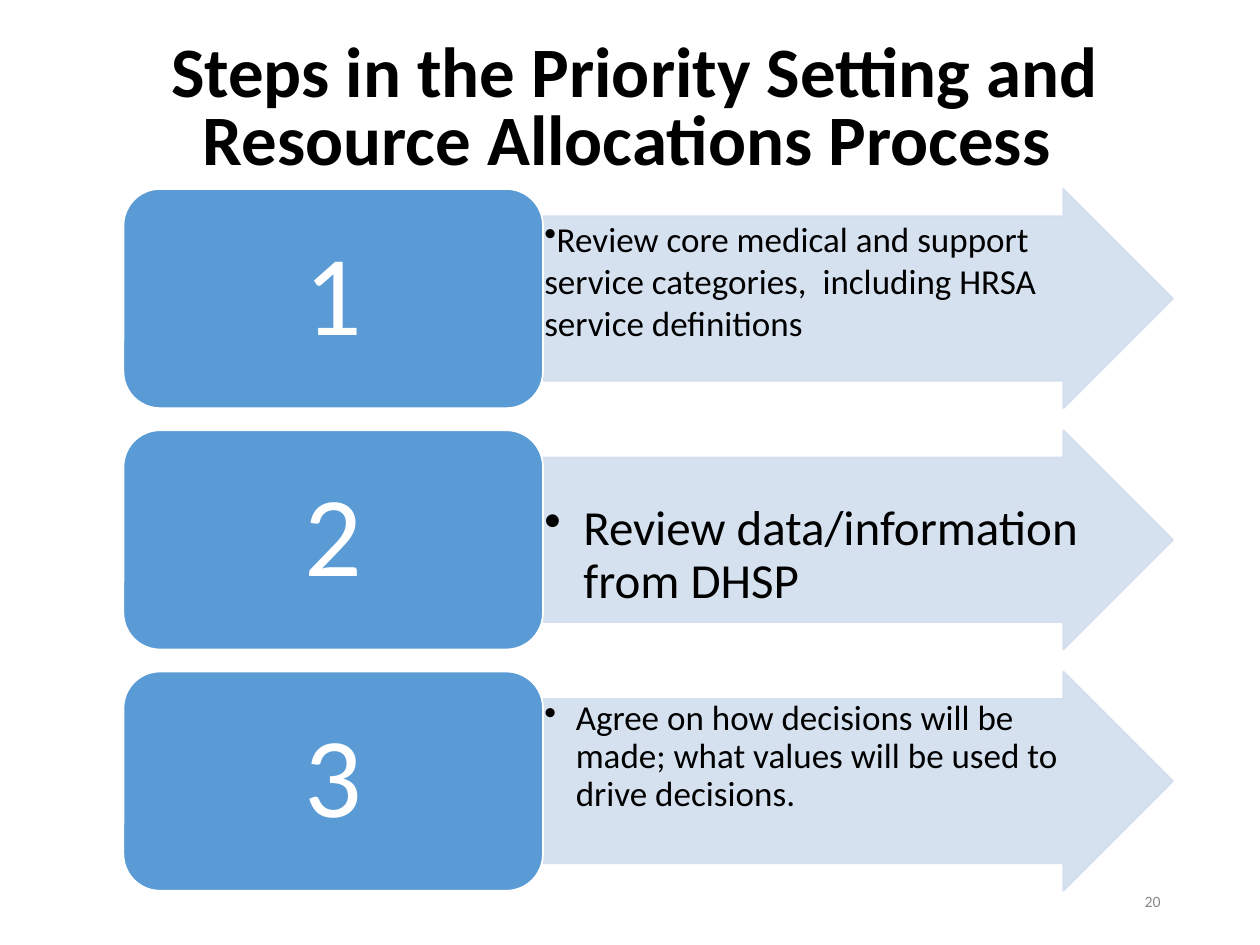
from dataclasses import dataclass

from lxml import etree
from pptx import Presentation
from pptx.dml.color import RGBColor
from pptx.enum.shapes import MSO_SHAPE
from pptx.enum.text import MSO_ANCHOR, PP_ALIGN
from pptx.oxml.ns import qn
from pptx.util import Inches, Pt

ARROW, ROUNDED = MSO_SHAPE.RIGHT_ARROW, MSO_SHAPE.ROUNDED_RECTANGLE
LEFT, CENTER, RIGHT = PP_ALIGN.LEFT, PP_ALIGN.CENTER, PP_ALIGN.RIGHT
TOP, MIDDLE = MSO_ANCHOR.TOP, MSO_ANCHOR.MIDDLE


@dataclass(frozen=True)
class Theme:
    font: str = "Calibri"
    black: RGBColor = RGBColor(0x00, 0x00, 0x00)
    white: RGBColor = RGBColor(0xFF, 0xFF, 0xFF)
    gray: RGBColor = RGBColor(0x89, 0x89, 0x89)
    blue: RGBColor = RGBColor(0x5B, 0x9B, 0xD5)
    pale: RGBColor = RGBColor(0xD2, 0xDE, 0xEF)
    title_size: float = 40.5
    number_size: float = 65
    page_number_size: float = 9


THEME = Theme()


@dataclass(frozen=True)
class Step:
    text: str
    size: float
    indent: float = 0.0
    spacing: float = 0.9
    top_inset: float = 0.01


STEPS = [
    Step("Review core medical and support service categories,  including HRSA service definitions",
         20, spacing=1.0),
    Step("Review data/information from DHSP", 28, indent=0.31, top_inset=0.36),
    Step("Agree on how decisions will be made; what values will be used to drive decisions.",
         20, indent=0.25),
]


def write(shape, text, size, color, align=LEFT, anchor=MIDDLE, spacing=1.0, bold=False):
    """Fill a shape with one paragraph and return that paragraph."""
    frame = shape.text_frame
    frame.word_wrap = True
    frame.vertical_anchor = anchor
    para = frame.paragraphs[0]
    para.text = text
    para.alignment = align
    para.line_spacing = spacing
    para.font.name = THEME.font
    para.font.size = Pt(size)
    para.font.bold = bold
    para.font.color.rgb = color
    return para


def add_text(page, box, *args, **options):
    shape = page.shapes.add_textbox(*map(Inches, box))
    return shape, write(shape, *args, **options)


def add_block(page, kind, box, fill, line):
    shape = page.shapes.add_shape(kind, *map(Inches, box))
    shape.shadow.inherit = False
    shape.fill.solid()
    shape.fill.fore_color.rgb = fill
    shape.line.color.rgb = line
    shape.line.width = Pt(1)
    return shape


def set_opacity(shape, percent):
    for color in shape.element.spPr.iter(qn("a:srgbClr")):
        etree.SubElement(color, qn("a:alpha"), val=str(percent * 1000))


def set_bullet(para, indent):
    props = para._p.get_or_add_pPr()
    props.set("marL", str(Inches(indent)))
    props.set("indent", str(-Inches(indent)))
    etree.SubElement(props, qn("a:buChar"), char="•")
    # The bullet must come before the default run properties
    defaults = props.find(qn("a:defRPr"))
    if defaults is not None:
        props.append(defaults)


def add_step(page, box, number, step):
    left, top, width, height = box
    block_width = 3.33
    arrow_left = left + block_width

    # Arrow
    arrow = add_block(page, ARROW, (arrow_left, top, width - block_width, height),
                      THEME.pale, THEME.pale)
    arrow.adjustments[0] = 0.75
    arrow.adjustments[1] = 0.5
    set_opacity(arrow, 90)

    # Description, inside the arrow's shaft
    shaft = (arrow_left, top + height / 8, 4.35, height * 0.75)
    label, para = add_text(page, shaft, step.text, step.size, THEME.black,
                           anchor=TOP, spacing=step.spacing)
    frame = label.text_frame
    frame.margin_left = frame.margin_right = frame.margin_bottom = Inches(0.01)
    frame.margin_top = Inches(step.top_inset)
    set_bullet(para, step.indent)

    # Number block
    block = add_block(page, ROUNDED, (left, top, block_width, height), THEME.blue, THEME.white)
    write(block, str(number), THEME.number_size, THEME.white, align=CENTER, spacing=0.9)


def add_steps(page, box):
    left, top, width, height = box
    step_height = 1.74
    pitch = (height - step_height) / (len(STEPS) - 1)
    for index, step in enumerate(STEPS):
        add_step(page, (left, top + index * pitch, width, step_height), index + 1, step)


def main():
    deck = Presentation()
    deck.slide_width, deck.slide_height = Inches(10), Inches(7.5)
    page = deck.slides.add_slide(deck.slide_layouts[6])

    # Page number
    add_text(page, (7.06, 6.95, 2.25, 0.4), "20", THEME.page_number_size, THEME.gray, align=RIGHT)
    # Title
    add_text(page, (0.73, 0.26, 8.62, 1.24),
             "Steps in the Priority Setting and Resource Allocations Process ",
             THEME.title_size, THEME.black, align=CENTER, spacing=0.8, bold=True)
    # Numbered steps
    add_steps(page, (0.98, 1.5, 8.33, 5.57))

    deck.save("out.pptx")


if __name__ == "__main__":
    main()
